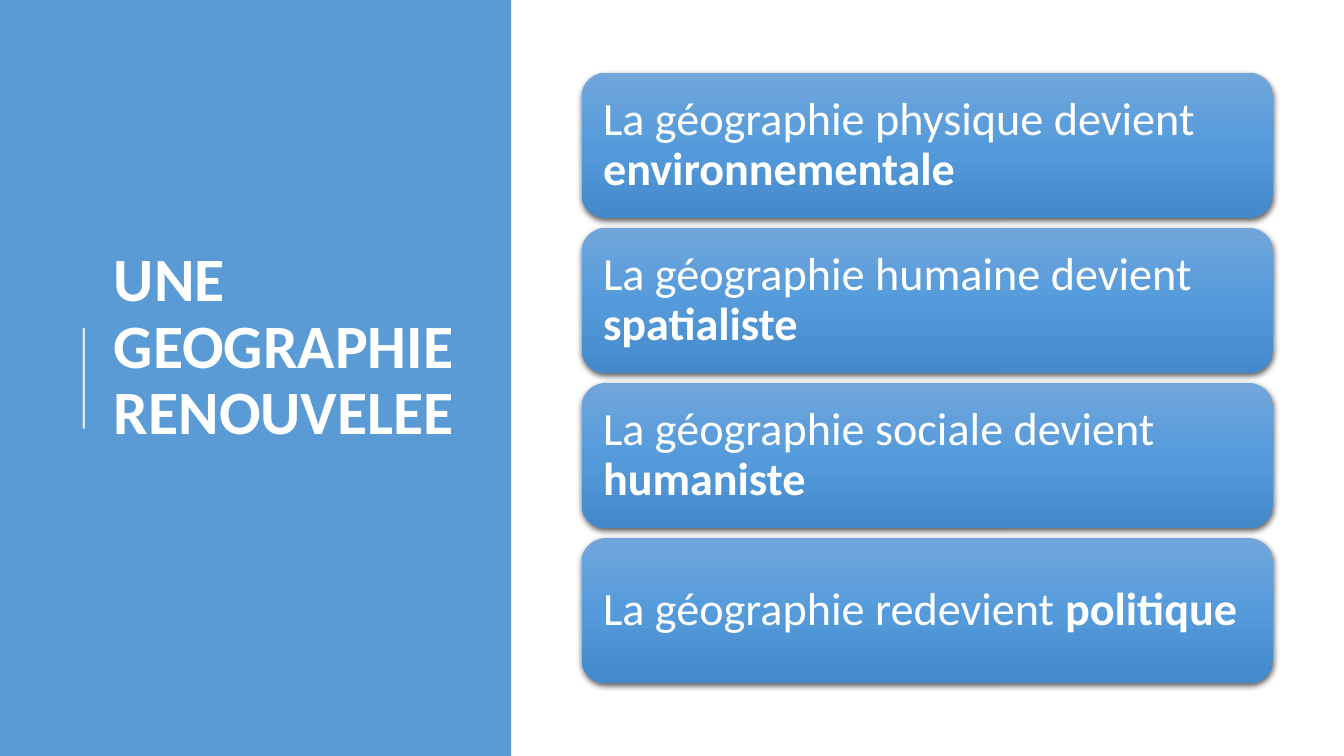
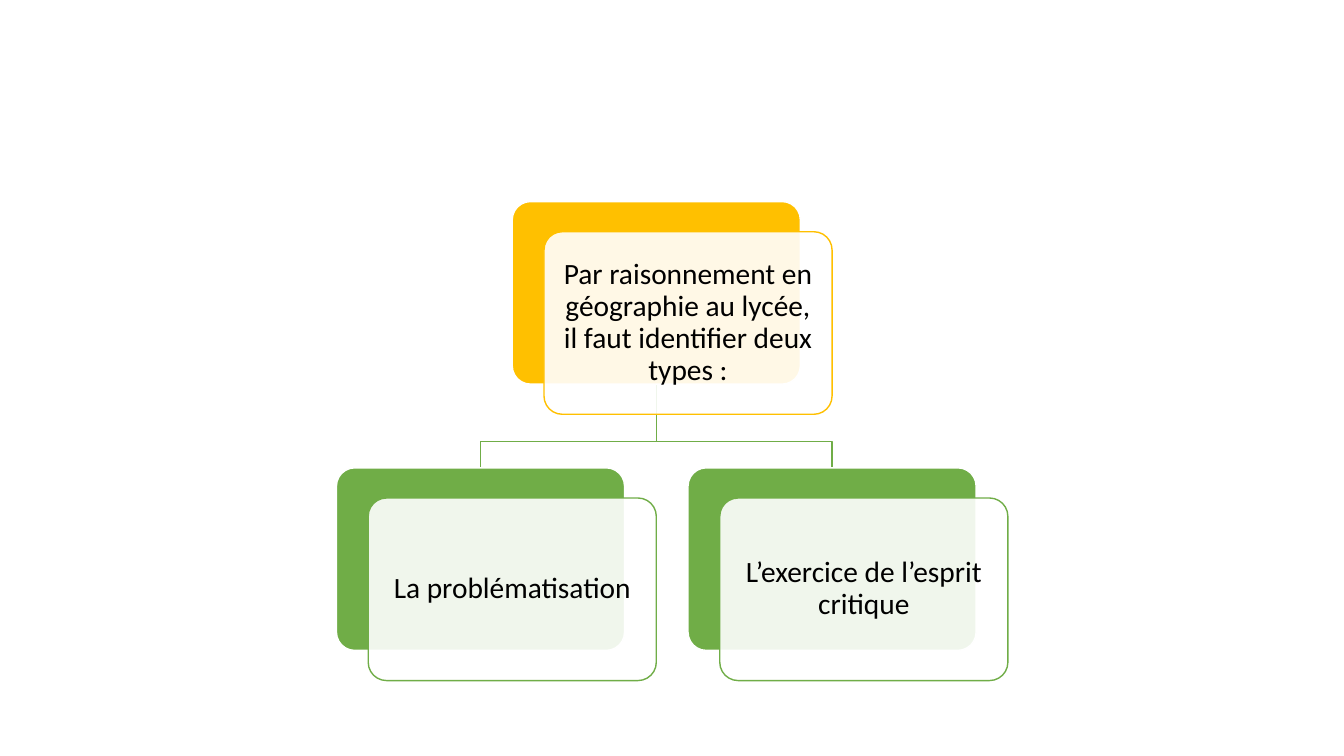
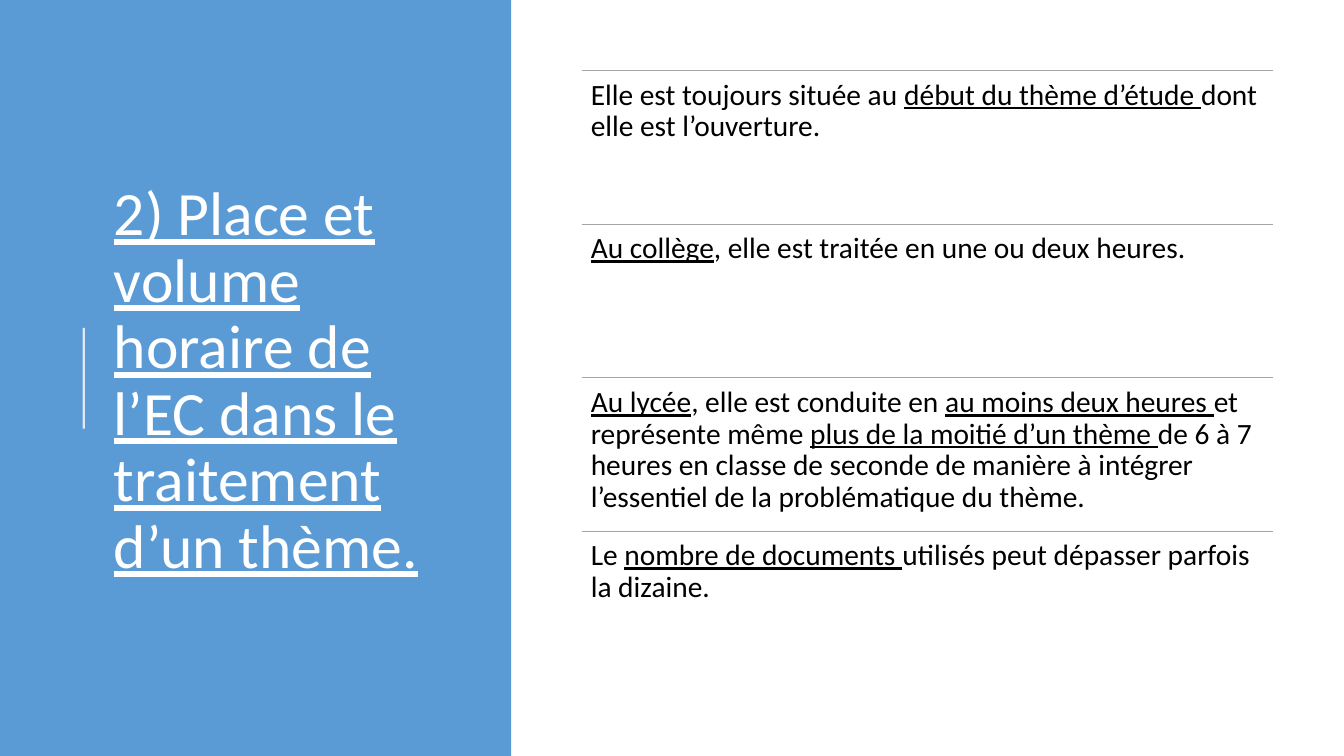
"""Build three geography teaching slides: a renewed discipline, types of reasoning, and lesson time."""

from dataclasses import dataclass, replace
from typing import NamedTuple

from lxml.etree import SubElement
from pptx import Presentation
from pptx.dml.color import RGBColor
from pptx.enum.shapes import MSO_CONNECTOR, MSO_SHAPE
from pptx.enum.text import MSO_ANCHOR, MSO_AUTO_SIZE, PP_ALIGN
from pptx.oxml.ns import qn
from pptx.shapes.autoshape import Shape
from pptx.shapes.connector import Connector
from pptx.slide import Slide
from pptx.text.text import TextFrame
from pptx.util import Cm, Length, Pt

WHITE = RGBColor(0xFF, 0xFF, 0xFF)
BLACK = RGBColor(0x00, 0x00, 0x00)
BLUE = RGBColor(0x5B, 0x9B, 0xD5)
GOLD = RGBColor(0xFF, 0xC0, 0x00)
GREEN = RGBColor(0x70, 0xAD, 0x47)
GREY = RGBColor(0xA5, 0xA5, 0xA5)
CARD_GRADIENT = (
    (0, RGBColor(0x71, 0xA6, 0xDB)),
    (50, RGBColor(0x55, 0x9B, 0xDB)),
    (100, RGBColor(0x44, 0x8A, 0xCA)),
)

FONT = "Calibri"
SLIDE_WIDTH, SLIDE_HEIGHT = Cm(33.87), Cm(19.05)
TITLE_ONLY, BLANK = 5, 6
CONTENT_LEFT, CONTENT_WIDTH = Cm(14.66), Cm(17.42)
CARD_TOP, CARD_HEIGHT, CARD_PITCH = Cm(1.83), Cm(3.66), Cm(3.91)
ROW_TOP, ROW_HEIGHT = Cm(1.78), Cm(3.87)
NODE_WIDTH, NODE_HEIGHT = Cm(7.26), Cm(4.6)
FRONT_SHIFT_X, FRONT_SHIFT_Y = Cm(0.8), Cm(0.76)
ROOT_LEFT, ROOT_TOP = Cm(12.91), Cm(5.08)
BRANCH_SPREAD, BRANCH_TOP, BRANCH_BEND = Cm(4.43), Cm(11.79), Cm(11.13)


class Part(NamedTuple):
    """A stretch of text, stressed or plain."""

    text: str
    stressed: bool = False


@dataclass(frozen=True)
class TextStyle:
    """The look of one kind of text."""

    size: int
    color: RGBColor
    inset: float
    anchor: MSO_ANCHOR = MSO_ANCHOR.MIDDLE
    align: PP_ALIGN = PP_ALIGN.LEFT
    underlined: bool = False
    space_below: float = 0


@dataclass(frozen=True)
class Node:
    """One box of the reasoning tree."""

    text: str
    left: Length
    top: Length
    color: RGBColor


BOLD_TITLE = TextStyle(44, WHITE, 0.25, space_below=1.7)
UNDERLINED_TITLE = replace(BOLD_TITLE, underlined=True, space_below=0)
CARD_STYLE = TextStyle(33, WHITE, 0.36)
NODE_STYLE = TextStyle(21, BLACK, 0.23, align=PP_ALIGN.CENTER)
ROW_STYLE = TextStyle(21, BLACK, 0.23, anchor=MSO_ANCHOR.TOP, underlined=True)

RENEWALS = (
    (Part("La géographie physique devient "), Part("environnementale", True)),
    (Part("La géographie humaine devient "), Part("spatialiste", True)),
    (Part("La géographie sociale devient "), Part("humaniste", True)),
    (Part("La géographie redevient "), Part("politique", True)),
)
ROOT = Node(
    "Par raisonnement en géographie au lycée, il faut identifier deux types :",
    ROOT_LEFT, ROOT_TOP, GOLD,
)
BRANCHES = (
    Node("La problématisation", ROOT_LEFT - BRANCH_SPREAD, BRANCH_TOP, GREEN),
    Node("L’exercice de l’esprit critique", ROOT_LEFT + BRANCH_SPREAD, BRANCH_TOP, GREEN),
)
TIME_RULES = (
    (
        Part("Elle est toujours située au "),
        Part("début du thème d’étude ", True),
        Part("dont elle est l’ouverture."),
    ),
    (Part("Au collège", True), Part(", elle est traitée en une ou deux heures.")),
    (
        Part("Au lycée", True),
        Part(", elle est conduite en "),
        Part("au moins deux heures ", True),
        Part("et représente même "),
        Part("plus de la moitié d’un thème ", True),
        Part(
            "de 6 à 7 heures en classe de seconde de manière à intégrer "
            "l’essentiel de la problématique du thème."
        ),
    ),
    (
        Part("Le "),
        Part("nombre de documents ", True),
        Part("utilisés peut dépasser parfois la dizaine."),
    ),
)


def write(frame: TextFrame, parts: tuple[Part, ...], style: TextStyle) -> None:
    """Fill a text frame with one paragraph in the given style."""
    frame.word_wrap = True
    frame.auto_size = MSO_AUTO_SIZE.NONE
    frame.vertical_anchor = style.anchor
    frame.margin_left = frame.margin_right = frame.margin_top = Cm(style.inset)
    frame.margin_bottom = Cm(style.inset + style.space_below)
    paragraph = frame.paragraphs[0]
    paragraph.alignment = style.align
    paragraph.line_spacing = 0.9
    for part in parts:
        run = paragraph.add_run()
        run.text = part.text
        run.font.name = FONT
        run.font.size = Pt(style.size)
        run.font.color.rgb = style.color
        run.font.bold = part.stressed and not style.underlined
        run.font.underline = part.stressed and style.underlined


def set_opacity(colored, percent: int) -> None:
    """Set the opacity of the first colour inside an XML element."""
    color = next(colored.iter(qn("a:srgbClr")))
    SubElement(color, qn("a:alpha"), val=str(percent * 1000))


def add_block(
    slide: Slide, kind: MSO_SHAPE, left: Length, top: Length, width: Length, height: Length,
    fill: RGBColor, outline: RGBColor | None = None,
) -> Shape:
    """Add a flat preset shape with an optional thin outline."""
    block = slide.shapes.add_shape(kind, left, top, width, height)
    block.shadow.inherit = False
    block.fill.solid()
    block.fill.fore_color.rgb = fill
    if outline is None:
        block.line.fill.background()
    else:
        block.line.color.rgb = outline
        block.line.width = Pt(1)
    return block


def add_rule(
    slide: Slide, start: tuple[Length, Length], end: tuple[Length, Length],
    color: RGBColor, weight: float,
) -> Connector:
    """Add a straight line without a shadow."""
    rule = slide.shapes.add_connector(MSO_CONNECTOR.STRAIGHT, *start, *end)
    rule.line.color.rgb = color
    rule.line.width = Pt(weight)
    SubElement(rule.element.spPr, qn("a:effectLst"))
    return rule


def add_banded_slide(deck: Presentation, heading: str, style: TextStyle) -> Slide:
    """Add a slide with the blue side band, its rule and its title."""
    slide = deck.slides.add_slide(deck.slide_layouts[TITLE_ONLY])
    title = slide.shapes.title
    band = add_block(slide, MSO_SHAPE.RECTANGLE, 0, 0, Cm(12.88), SLIDE_HEIGHT, BLUE)
    rule = add_rule(slide, (Cm(2.11), Cm(10.8)), (Cm(2.11), Cm(8.26)), WHITE, 1.5)
    set_opacity(rule.element.spPr, 80)
    title.element.addprevious(band.element)
    title.element.addprevious(rule.element)
    title.left, title.top = Cm(2.62), Cm(1.98)
    title.width, title.height = Cm(9.37), Cm(15.29)
    write(title.text_frame, (Part(heading, True),), style)
    return slide


def shade_card(card: Shape) -> None:
    """Give a card its vertical gradient and soft shadow."""
    card.fill.gradient()
    gradient = card.element.spPr.find(qn("a:gradFill"))
    for child in list(gradient):
        gradient.remove(child)
    stops = SubElement(gradient, qn("a:gsLst"))
    for position, color in CARD_GRADIENT:
        stop = SubElement(stops, qn("a:gs"), pos=str(position * 1000))
        SubElement(stop, qn("a:srgbClr"), val=str(color))
    SubElement(gradient, qn("a:lin"), ang="5400000", scaled="0")
    effects = card.element.spPr.find(qn("a:effectLst"))
    shadow = SubElement(
        effects, qn("a:outerShdw"), blurRad=str(Pt(4.5)), dist=str(Pt(1.5)),
        dir="5400000", algn="ctr", rotWithShape="0",
    )
    SubElement(shadow, qn("a:srgbClr"), val=str(BLACK))
    set_opacity(shadow, 63)


def add_branch_line(slide: Slide, branch: Node) -> None:
    """Draw the bent line from the root to a branch."""
    start_x, start_y = ROOT.left + NODE_WIDTH // 2, ROOT.top + NODE_HEIGHT
    end_x = branch.left + NODE_WIDTH // 2
    builder = slide.shapes.build_freeform(start_x, start_y)
    builder.add_line_segments(
        [(start_x, BRANCH_BEND), (end_x, BRANCH_BEND), (end_x, branch.top)], close=False
    )
    elbow = builder.convert_to_shape()
    elbow.shadow.inherit = False
    elbow.fill.background()
    elbow.line.color.rgb = GREEN
    elbow.line.width = Pt(1)


def add_node(slide: Slide, node: Node) -> None:
    """Draw a coloured box and the translucent text box over it."""
    size = NODE_WIDTH, NODE_HEIGHT
    back = add_block(
        slide, MSO_SHAPE.ROUNDED_RECTANGLE, node.left, node.top, *size, node.color, WHITE
    )
    front = add_block(
        slide, MSO_SHAPE.ROUNDED_RECTANGLE, node.left + FRONT_SHIFT_X,
        node.top + FRONT_SHIFT_Y, *size, WHITE, node.color,
    )
    back.adjustments[0] = front.adjustments[0] = 0.1
    set_opacity(front.element.spPr.find(qn("a:solidFill")), 90)
    write(front.text_frame, (Part(node.text),), NODE_STYLE)


def build_renewal(deck: Presentation) -> None:
    """Build the slide on the renewal of geography."""
    slide = add_banded_slide(deck, "UNE GEOGRAPHIE RENOUVELEE", BOLD_TITLE)
    for index, renewal in enumerate(RENEWALS):
        card = add_block(
            slide, MSO_SHAPE.ROUNDED_RECTANGLE, CONTENT_LEFT, CARD_TOP + index * CARD_PITCH,
            CONTENT_WIDTH, CARD_HEIGHT, BLUE,
        )
        shade_card(card)
        write(card.text_frame, renewal, CARD_STYLE)


def build_reasoning(deck: Presentation) -> None:
    """Build the tree of reasoning types."""
    slide = deck.slides.add_slide(deck.slide_layouts[BLANK])
    for branch in BRANCHES:
        add_branch_line(slide, branch)
    for node in (ROOT, *BRANCHES):
        add_node(slide, node)


def build_lesson_time(deck: Presentation) -> None:
    """Build the slide on the place and time of the case study."""
    slide = add_banded_slide(
        deck, "2) Place et volume horaire de l’EC dans le traitement d’un thème.",
        UNDERLINED_TITLE,
    )
    for index, time_rule in enumerate(TIME_RULES):
        top = ROW_TOP + index * ROW_HEIGHT
        add_rule(slide, (CONTENT_LEFT, top), (CONTENT_LEFT + CONTENT_WIDTH, top), GREY, 1)
        row = slide.shapes.add_textbox(CONTENT_LEFT, top, CONTENT_WIDTH, ROW_HEIGHT)
        write(row.text_frame, time_rule, ROW_STYLE)


def main() -> None:
    """Build and save the deck."""
    deck = Presentation()
    deck.slide_width, deck.slide_height = SLIDE_WIDTH, SLIDE_HEIGHT
    build_renewal(deck)
    build_reasoning(deck)
    build_lesson_time(deck)
    deck.save("out.pptx")


if __name__ == "__main__":
    main()
